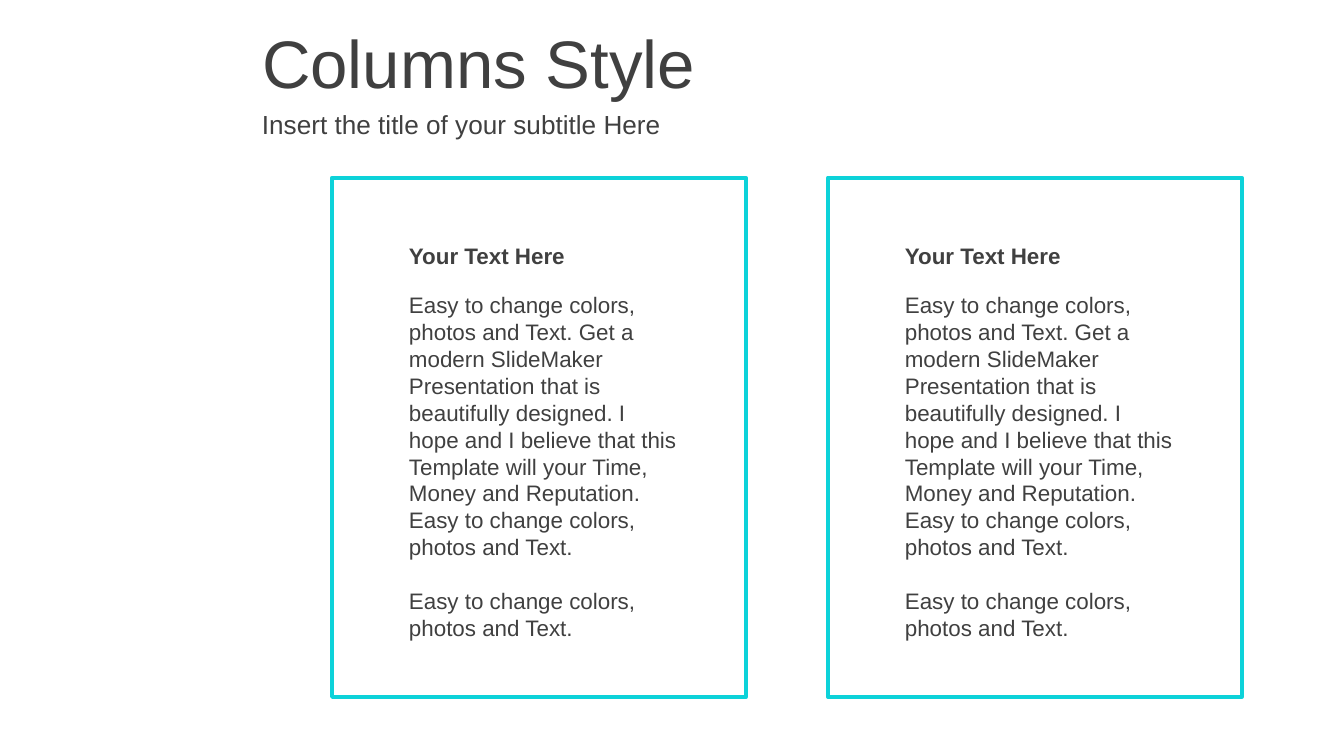
from dataclasses import dataclass

from pptx import Presentation, util as u
from pptx.dml.color import RGBColor
from pptx.enum import shapes, text


@dataclass(frozen=True)
class Theme:
    font: str = "Arial"
    ink: str = "404040"
    accent: str = "0DD2D9"
    title: float = 36
    subtitle: float = 14
    body: float = 12
    border: float = 2
    gap: float = 14.4


T = Theme()
W = 10
H = W * 9 / 16
HEADING = "Your Text Here"
BODY = [
    "Easy to change colors, photos and Text. Get a modern SlideMaker Presentation "
    "that is beautifully designed. I hope and I believe that this Template will "
    "your Time, Money and Reputation. Easy to change colors, photos and Text.",
    "Easy to change colors, photos and Text.",
]


def inches(box):
    return [u.Inches(v) for v in box]


def within(box, left, top, width, height):
    x, y, w, h = box
    return x + left * w, y + top * h, width * w, height * h


def apply(obj, formats):
    for name, value in formats.items():
        setattr(obj, name, value)


def write(sp, paragraphs, size, bold=False):
    tf = sp.text_frame
    apply(tf, {"word_wrap": True, "vertical_anchor": text.MSO_ANCHOR.MIDDLE,
               "auto_size": text.MSO_AUTO_SIZE.NONE})
    for i, words in enumerate(paragraphs):
        p = tf.paragraphs[0] if i == 0 else tf.add_paragraph()
        apply(p, {"alignment": text.PP_ALIGN.LEFT,
                  "space_before": u.Pt(T.gap if i else 0)})
        r = p.add_run()
        r.text = words
        apply(r.font, {"name": T.font, "size": u.Pt(size), "bold": bold})
        r.font.color.rgb = RGBColor.from_string(T.ink)


def add_text(s, box, *args, **formats):
    write(s.shapes.add_textbox(*inches(box)), *args, **formats)


def header(s, box):
    sp = s.shapes.title
    names = ("left", "top", "width", "height")
    apply(sp, dict(zip(names, inches(within(box, 0, 0, 1, 0.67)))))
    write(sp, ["Columns Style"], T.title)
    add_text(s, within(box, 0, 0.67, 1, 0.33),
             ["Insert the title of your subtitle Here"], T.subtitle)


def card(s, box):
    sp = s.shapes.add_shape(shapes.MSO_SHAPE.RECTANGLE, *inches(box))
    sp.shadow.inherit = False
    sp.fill.background()
    sp.line.color.rgb = RGBColor.from_string(T.accent)
    sp.line.width = u.Pt(T.border)
    add_text(s, within(box, 0.154, 0.111, 0.718, 0.078), [HEADING], T.body, bold=True)
    add_text(s, within(box, 0.154, 0.202, 0.718, 0.707), BODY, T.body)


def columns(s, box, count, width):
    x, y, w, h = box
    step = (w - width) / (count - 1)
    for i in range(count):
        card(s, (x + i * step, y, width, h))


def main():
    prs = Presentation()
    prs.slide_width, prs.slide_height = inches((W, H))
    s = prs.slides.add_slide(prs.slide_layouts[5])
    page = (0, 0, W, H)
    header(s, within(page, 0.185, 0.025, 0.815, 0.167))
    columns(s, within(page, 0.247, 0.235, 0.677, 0.687), 2, 0.308 * W)
    prs.save("out.pptx")


if __name__ == "__main__":
    main()
